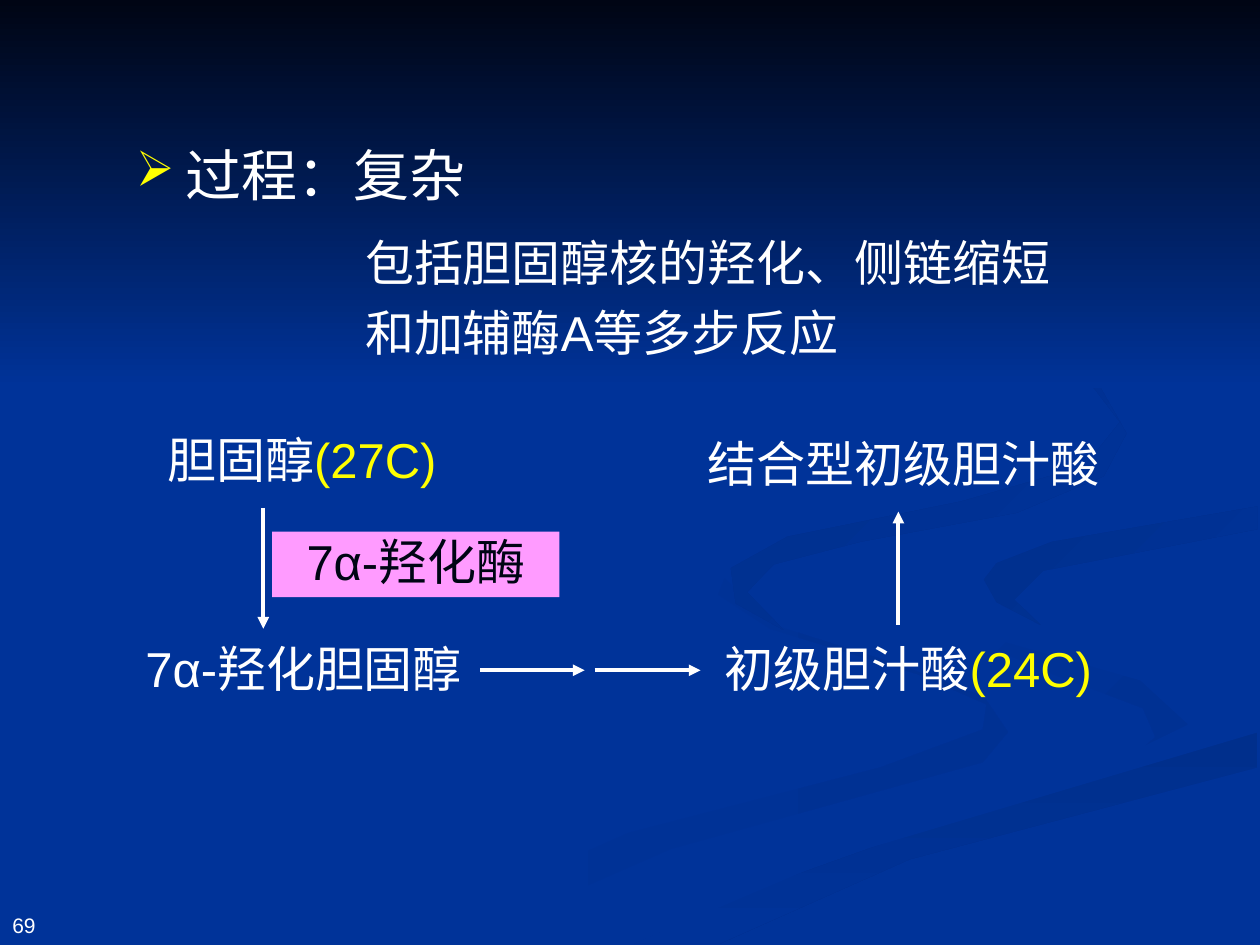
import pptx
import pptx.util
import pptx.dml.color
import pptx.enum.shapes
import pptx.enum.text
import pptx.oxml
import pptx.oxml.ns

Inches, Pt = pptx.util.Inches, pptx.util.Pt
RGB = pptx.dml.color.RGBColor
ALIGN = pptx.enum.text.PP_ALIGN
ANCHOR = pptx.enum.text.MSO_ANCHOR
RECT = pptx.enum.shapes.MSO_SHAPE.RECTANGLE
BLUE = RGB(0x00, 0x33, 0x99)
DEEP = RGB(0x00, 0x31, 0x93)
SHADE = RGB(0x00, 0x2F, 0x8C)
NIGHT = RGB(0x00, 0x05, 0x14)
WHITE = RGB(0xFF, 0xFF, 0xFF)
YELLOW = RGB(0xFF, 0xFF, 0x00)
PINK = RGB(0xFF, 0x9B, 0xFF)
SPACE = pptx.oxml.ns.nsdecls("a")

deck = pptx.Presentation()
deck.slide_width, deck.slide_height = Inches(10), Inches(7.5)
slide = deck.slides.add_slide(deck.slide_layouts[6])
slide.background.fill.solid()
slide.background.fill.fore_color.rgb = BLUE


def paint(shape, first, last, angle):
    """Blend two colours, with the angle counted anticlockwise."""
    shape.shadow.inherit = False
    shape.line.fill.background()
    shape.fill.gradient()
    shape.fill.gradient_angle = angle
    for stop, color in zip(shape.fill.gradient_stops, (first, last)):
        stop.color.rgb = color


def write(shape, parts, size=28, align=ALIGN.LEFT, color=WHITE):
    """Fill a shape with one paragraph of (text, colour) parts."""
    frame = shape.text_frame
    frame.word_wrap = True
    para = frame.paragraphs[0]
    para.alignment = align
    para.font.size, para.font.name = Pt(size), "Arial"
    para.font.color.rgb = color
    for text, tint in parts:
        run = para.add_run()
        run.text = text
        if tint != color:
            run.font.color.rgb = tint
    return para


# Background ribbons: outlines in hundredths of an inch
ribbons = [
    (BLUE, DEEP, 0, [
        (781, 553), (715, 528), (614, 496), (575, 459), (570, 472), (611, 499),
        (728, 535), (783, 559), (780, 579), (699, 609), (499, 661), (300, 749),
        (361, 749), (532, 674), (780, 605), (800, 581)]),
    (BLUE, DEEP, 315, [
        (943, 570), (905, 540), (774, 503), (724, 464), (739, 494), (838, 536),
        (907, 562), (917, 585), (894, 605), (941, 581)]),
    (SHADE, BLUE, 270, [
        (503, 749), (571, 749), (722, 682), (998, 609), (998, 581), (764, 647),
        (599, 706)]),
    (BLUE, BLUE, 0, [
        (725, 464), (775, 503), (905, 540), (943, 575), (869, 611), (663, 668),
        (477, 749), (503, 749), (663, 681), (999, 581), (999, 538), (817, 492),
        (781, 463), (835, 430), (999, 402), (999, 387), (770, 427)]),
    (SHADE, BLUE, 315, [
        (781, 460), (791, 478), (826, 496), (805, 476), (828, 453), (998, 420),
        (998, 402), (835, 430), (791, 447)]),
    (SHADE, BLUE, 315, [
        (683, 430), (807, 407), (876, 378), (894, 344), (864, 291), (762, 233),
        (846, 279), (889, 335), (861, 370), (763, 398), (625, 426), (580, 451),
        (584, 479), (622, 500), (593, 470), (614, 448)]),
]
for first, last, angle, points in ribbons:
    pen = slide.shapes.build_freeform(*points[0], scale=Inches(0.01))
    pen.add_line_segments(points[1:], close=True)
    paint(pen.convert_to_shape(), first, last, angle)

# Dark band fading down from the top
band = slide.shapes.add_shape(RECT, 0, 0, Inches(10), Inches(3.08))
paint(band, NIGHT, BLUE, 270)

# Reaction arrows
for x1, y1, x2, y2 in [(3.81, 5.32, 4.64, 5.32), (4.72, 5.32, 5.56, 5.32),
                       (7.13, 4.96, 7.13, 4.06), (2.09, 4.03, 2.09, 4.99)]:
    arrow = slide.shapes.add_connector(
        pptx.enum.shapes.MSO_CONNECTOR.STRAIGHT,
        Inches(x1), Inches(y1), Inches(x2), Inches(y2))
    arrow.line.color.rgb = WHITE
    arrow.line.width = Pt(2.25)
    shape = arrow._element.spPr
    shape.find(pptx.oxml.ns.qn("a:ln")).append(
        pptx.oxml.parse_xml(f'<a:tailEnd {SPACE} type="triangle"/>'))
    shape.append(pptx.oxml.parse_xml(f"<a:effectLst {SPACE}/>"))

# Compounds
for x, y, wide, align, parts in [
        (5.56, 5.02, 3.3, ALIGN.CENTER, [("初级胆汁酸", WHITE), ("(24C)", YELLOW)]),
        (5.4, 3.39, 3.54, ALIGN.CENTER, [("结合型初级胆汁酸", WHITE)]),
        (1.23, 3.36, 2.6, ALIGN.LEFT, [("胆固醇", WHITE), ("(27C)", YELLOW)]),
        (0.91, 5.02, 3, ALIGN.CENTER, [("7α-羟化胆固醇", WHITE)])]:
    box = slide.shapes.add_textbox(Inches(x), Inches(y), Inches(wide), Inches(0.57))
    write(box, parts, align=align)

# Enzyme label
label = slide.shapes.add_shape(RECT, Inches(2.16), Inches(4.22), Inches(2.28), Inches(0.52))
label.shadow.inherit = False
label.fill.solid()
label.fill.fore_color.rgb = PINK
label.line.fill.background()
label.text_frame.vertical_anchor = ANCHOR.TOP
write(label, [("7α-羟化酶", NIGHT)], align=ALIGN.CENTER, color=NIGHT).line_spacing = 0.9

# Bulleted heading
head = slide.shapes.add_textbox(Inches(0.98), Inches(1.07), Inches(3.58), Inches(0.63))
props = write(head, [("过程：复杂", WHITE)], size=32)._p.get_or_add_pPr()
props.set("marL", str(Inches(0.39)))
props.set("indent", str(-Inches(0.39)))
marks = (f'<a:buClr {SPACE}><a:srgbClr val="{YELLOW}"/></a:buClr>',
         f'<a:buSzPct {SPACE} val="88000"/>', f'<a:buChar {SPACE} char="➢"/>')
for spot, mark in enumerate(marks):
    props.insert(spot, pptx.oxml.parse_xml(mark))

# Explanation
note = slide.shapes.add_textbox(Inches(2.8), Inches(1.7), Inches(5.86), Inches(1.23))
write(note, [("包括胆固醇核的羟化、侧链缩短和加辅酶A等多步反应", WHITE)]).line_spacing = 1.2

# Page number
page = slide.shapes.add_textbox(0, Inches(6.97), Inches(2.33), Inches(0.52))
page.text_frame.vertical_anchor = ANCHOR.BOTTOM
write(page, [("69", WHITE)], size=12)

deck.save("out.pptx")
